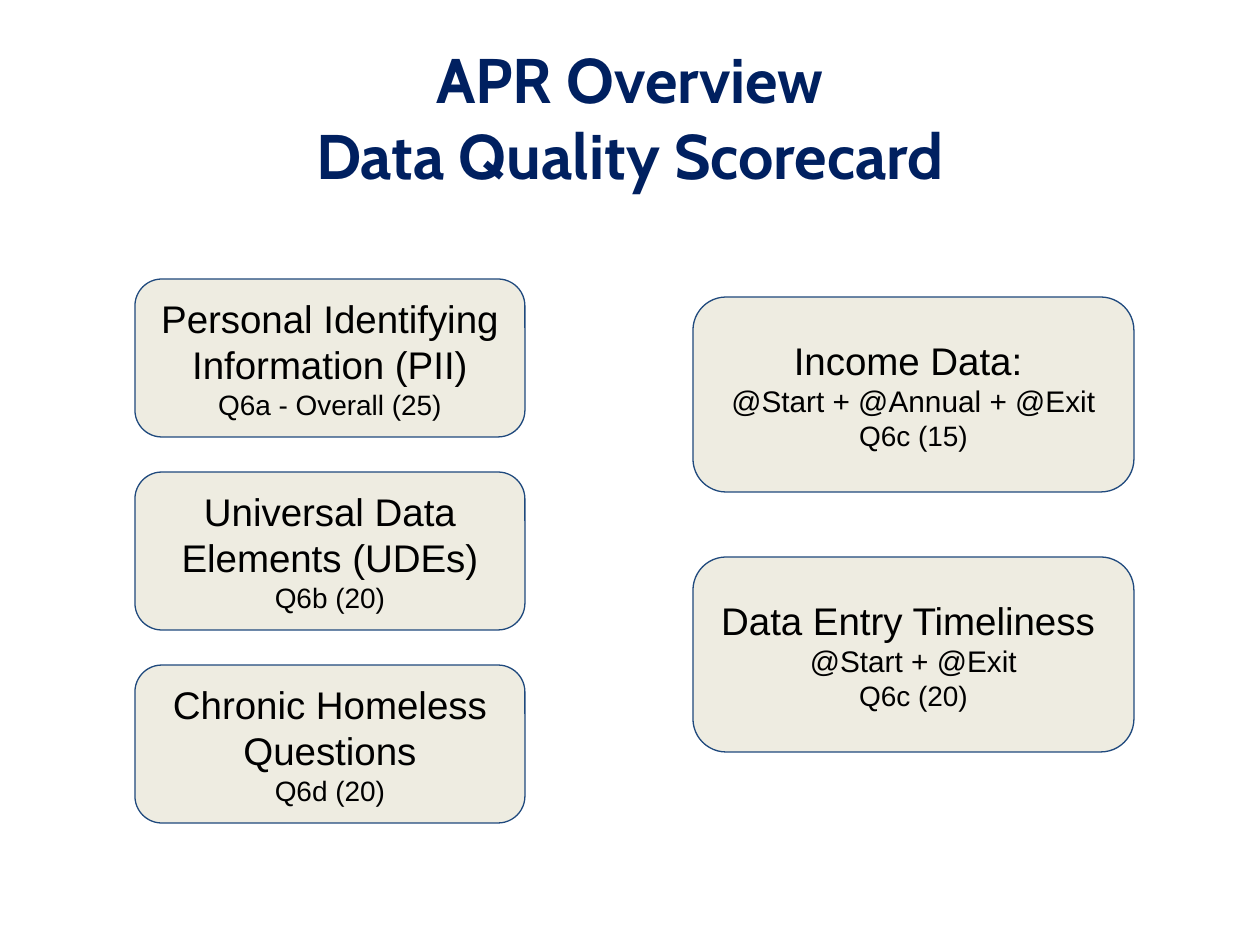
import pptx
import pptx.util
import pptx.dml.color
import pptx.enum.shapes
import pptx.enum.text

SCALE = 914400 / 126
NAVY, BLUE, CREAM, BLACK = "002060", "1F497D", "EEECE1", "000000"

LEFT = [
    [("Personal Identifying Information (PII)", 22), ("Q6a - Overall (25)", 16)],
    [("Universal Data Elements (UDEs)", 22), ("Q6b (20)", 16)],
    [("Chronic Homeless Questions", 22), ("Q6d (20)", 16)],
]
RIGHT = [
    [("Income Data: ", 22), ("@Start + @Annual + @Exit", 17), ("Q6c (15)", 16)],
    [("Data Entry Timeliness ", 22), ("@Start + @Exit", 17), ("Q6c (20)", 16)],
]


def px(num):
    return pptx.util.Emu(round(num * SCALE))


def color(code):
    return pptx.dml.color.RGBColor.from_string(code)


def style(item, **form):
    for name, value in form.items():
        setattr(item, name, value)


def write(shape, lines, font, code, bold, pad):
    """Fill a shape with centred (text, size) paragraphs; pad is the top and bottom inset."""
    frame = shape.text_frame
    style(frame, word_wrap=True, vertical_anchor=pptx.enum.text.MSO_ANCHOR.MIDDLE,
          margin_left=px(13), margin_right=px(13),
          margin_top=px(pad), margin_bottom=px(pad))
    for i, (text, size) in enumerate(lines):
        para = frame.add_paragraph() if i else frame.paragraphs[0]
        para.alignment = pptx.enum.text.PP_ALIGN.CENTER
        run = para.add_run()
        run.text = text
        style(run.font, name=font, size=pptx.util.Pt(size), bold=bold)
        run.font.color.rgb = color(code)


def title(slide, box):
    shape = slide.shapes.add_textbox(*map(px, box))
    lines = [("APR Overview", 36), ("Data Quality Scorecard", 36)]
    write(shape, lines, "Cabin", NAVY, True, 6)


def column(slide, box, gap, cards):
    """Stack equal cards in the box with a fixed gap."""
    left, top, width, height = box
    tall = (height - gap * (len(cards) - 1)) / len(cards)
    for i, lines in enumerate(cards):
        place = (left, top + i * (tall + gap), width, tall)
        card = slide.shapes.add_shape(
            pptx.enum.shapes.MSO_SHAPE.ROUNDED_RECTANGLE, *map(px, place))
        card.adjustments[0] = 0.17
        card.shadow.inherit = False
        card.fill.solid()
        card.fill.fore_color.rgb = color(CREAM)
        card.line.color.rgb = color(BLUE)
        card.line.width = pptx.util.Pt(0.75)
        write(card, lines, "Arial", BLACK, False, 13)


def main():
    deck = pptx.Presentation()
    style(deck, slide_width=px(1260), slide_height=px(945))
    slide = deck.slides.add_slide(deck.slide_layouts[6])
    title(slide, (63, 38, 1134, 157))
    column(slide, (135, 279, 390, 544), 35, LEFT)
    column(slide, (693, 297, 441, 455), 65, RIGHT)
    deck.save("out.pptx")


if __name__ == "__main__":
    main()
